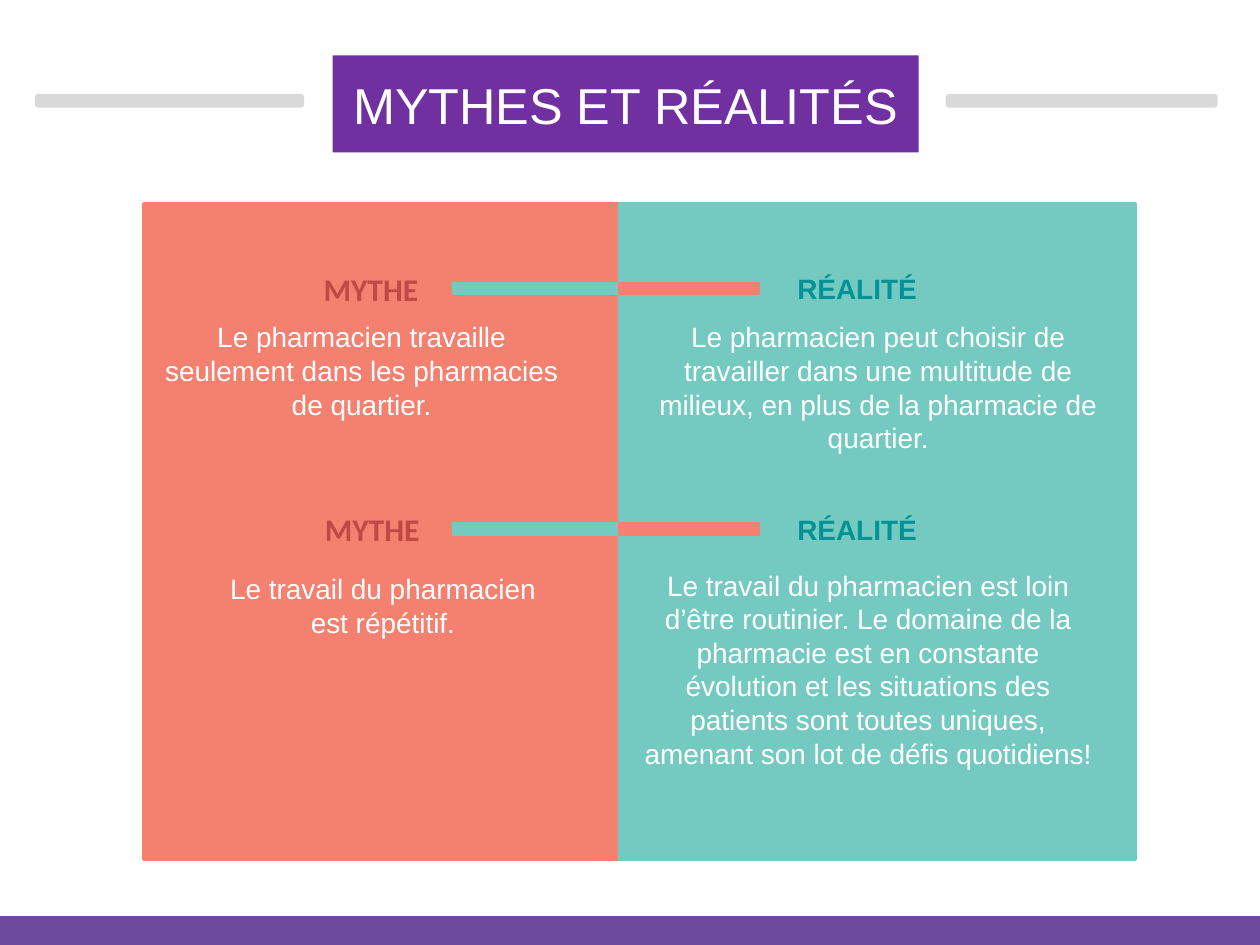
from pptx import Presentation
from pptx.dml.color import RGBColor
from pptx.enum.shapes import MSO_SHAPE
from pptx.enum.text import MSO_ANCHOR, MSO_AUTO_SIZE, PP_ALIGN
from pptx.util import Inches, Pt

RECT, ROUNDED = MSO_SHAPE.RECTANGLE, MSO_SHAPE.ROUNDED_RECTANGLE
LEFT, CENTER = PP_ALIGN.LEFT, PP_ALIGN.CENTER
TOP, MIDDLE = MSO_ANCHOR.TOP, MSO_ANCHOR.MIDDLE
GROW = MSO_AUTO_SIZE.SHAPE_TO_FIT_TEXT

# The slide is a grid of 100 columns by 75 rows
COLUMNS, ROWS = 100, 75
PURPLE, VIOLET, GREY, WHITE = "7030A0", "6E499D", "D9D9D9", "FFFFFF"
CORAL, TEAL, DARK_RED, DARK_TEAL = "F4806F", "74CAC1", "C04945", "059296"


def color(hex_value):
    return RGBColor.from_string(hex_value)


def write(frame, text, size=16, font="Arial", ink=WHITE, bold=False,
          align=CENTER, anchor=TOP):
    """Fill a text frame with one formatted paragraph."""
    frame.word_wrap = True
    frame.vertical_anchor = anchor
    paragraph = frame.paragraphs[0]
    paragraph.text = text
    paragraph.alignment = align
    for run in paragraph.runs:
        run.font.size = Pt(size)
        run.font.name = font
        run.font.bold = bold
        run.font.color.rgb = color(ink)


class SlideBuilder:
    """Places styled elements on the slide by grid column and row."""

    def __init__(self, deck):
        self.slide = deck.slides.add_slide(deck.slide_layouts[6])
        self.column = deck.slide_width / COLUMNS
        self.row = deck.slide_height / ROWS
        self.border = Pt(2)

    def place(self, left, top, width, height):
        return (round(left * self.column), round(top * self.row),
                round(width * self.column), round(height * self.row))

    def block(self, box, fill, kind=RECT, outlined=True):
        block = self.slide.shapes.add_shape(kind, *self.place(*box))
        block.shadow.inherit = False
        block.fill.solid()
        block.fill.fore_color.rgb = color(fill)
        if outlined:
            block.line.color.rgb = color(fill)
            block.line.width = self.border
        else:
            block.line.fill.background()
        return block

    def text(self, box, wording, **style):
        frame = self.slide.shapes.add_textbox(*self.place(*box)).text_frame
        write(frame, wording, **style)
        frame.auto_size = GROW

    def link(self, top):
        """Two-tone bar that crosses from myth to reality."""
        self.block((36, top, 14, 0.8), TEAL)
        self.block((49.2, top, 11, 0.8), CORAL)


def main():
    deck = Presentation()
    deck.slide_width, deck.slide_height = Inches(10), Inches(7.5)
    page = SlideBuilder(deck)

    # Title between two grey bars, and the footer band
    title = page.block((26.4, 4.4, 46.5, 7.7), PURPLE, outlined=False)
    write(title.text_frame, "MYTHES ET RÉALITÉS", size=28.8, anchor=MIDDLE)
    page.block((0, 72.8, COLUMNS, 2.2), VIOLET)
    for left, width in ((75.2, 21.3), (2.9, 21.1)):
        page.block((left, 7.6, width, 0.8), GREY, ROUNDED)

    # Myth and reality panels
    page.block((11.4, 16.2, 37.8, 52), CORAL)
    page.block((49.2, 16.2, 40.9, 52), TEAL)

    # Each pair: row of its link, column of its myth heading, two answers
    pairs = (
        (22.5, 24.7,
         (11.4, 24.9, 34.6, 9.1),
         "Le pharmacien travaille seulement dans les pharmacies de quartier.",
         (50, 24.9, 39.4, 11.8),
         "Le pharmacien peut choisir de travailler dans une multitude de "
         "milieux, en plus de la pharmacie de quartier."),
        (41.6, 24.8,
         (13.1, 44.9, 34.6, 6.4),
         "Le travail du pharmacien\nest répétitif.",
         (50, 44.6, 37.8, 17.2),
         "Le travail du pharmacien est loin d’être routinier. Le domaine de "
         "la pharmacie est en constante évolution et les situations des "
         "patients sont toutes uniques, amenant son lot de défis quotidiens!"),
    )
    for top, heading_left, myth_box, myth, reality_box, reality in pairs:
        page.link(top)
        page.text((heading_left, top - 1.6, 11.3, 4), "MYTHE", size=18,
                  font="Calibri", ink=DARK_RED, bold=True, align=LEFT)
        page.text((62.3, top - 1.4, 12.9, 3.7), "RÉALITÉ",
                  ink=DARK_TEAL, bold=True, align=LEFT)
        page.text(myth_box, myth)
        page.text(reality_box, reality)

    deck.save("out.pptx")


if __name__ == "__main__":
    main()
